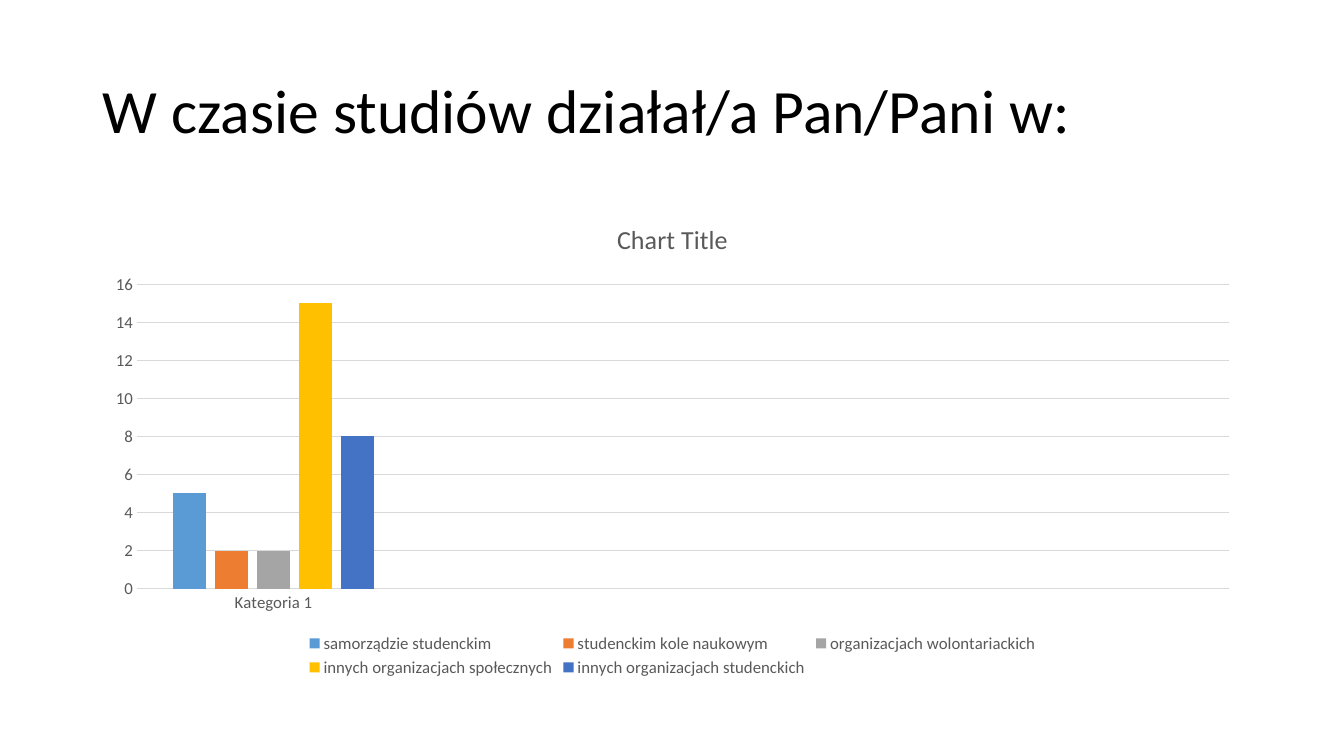
from pptx import Presentation
from pptx.chart.data import CategoryChartData as ChartData
from pptx.dml.color import RGBColor as RGB
from pptx.enum.chart import XL_CHART_TYPE as Kind, XL_LEGEND_POSITION as Spot
from pptx.enum.chart import XL_TICK_MARK as Tick
from pptx.enum.text import MSO_ANCHOR as Anchor, MSO_AUTO_SIZE as Fit, PP_ALIGN as Align
from pptx.util import Inches, Pt

# Content
TITLE = "W czasie studiów\u00a0działał/a Pan/Pani w:"
HEAD = "Chart Title"
CATS = ["Kategoria 1", "", "", ""]
SERIES = [
    ("samorządzie studenckim", 5, "blue"),
    ("studenckim kole naukowym", 2, "orange"),
    ("organizacjach wolontariackich", 2, "gray"),
    ("innych organizacjach społecznych", 15, "gold"),
    ("innych organizacjach studenckich", 8, "navy"),
]
COLORS = {
    "black": "000000", "text": "595959", "grid": "D9D9D9",
    "blue": "5B9BD5", "orange": "ED7D31", "gray": "A5A5A5",
    "gold": "FFC000", "navy": "4472C4",
}
FONT = "Calibri"
LEFT, WIDTH = 0.92, 11.5


def color(name):
    return RGB.from_string(COLORS[name])


def style(font, size, name="text"):
    font.name = FONT
    font.size = Pt(size)
    font.bold = False
    font.color.rgb = color(name)


def rule(line):
    line.color.rgb = color("grid")
    line.width = Pt(0.75)


def add_title(slide):
    title = slide.shapes.title
    title.left, title.top = Inches(LEFT), Inches(0.4)
    title.width, title.height = Inches(WIDTH), Inches(1.45)
    frame = title.text_frame
    frame.auto_size = Fit.NONE
    frame.word_wrap = True
    frame.vertical_anchor = Anchor.MIDDLE
    para = frame.paragraphs[0]
    para.alignment = Align.LEFT
    para.line_spacing = 0.9
    run = para.add_run()
    run.text = TITLE
    style(run.font, 44, "black")


def add_bars(slide):
    data = ChartData()
    data.categories = CATS
    for name, value, _ in SERIES:
        data.add_series(name, [value] + [None] * (len(CATS) - 1))
    chart = slide.shapes.add_chart(
        Kind.COLUMN_CLUSTERED, Inches(LEFT), Inches(2),
        Inches(WIDTH), Inches(4.76), data).chart
    style(chart.font, 10, "black")

    # Chart heading
    chart.has_title = True
    run = chart.chart_title.text_frame.paragraphs[0].add_run()
    run.text = HEAD
    style(run.font, 18.6)
    chart.chart_title.include_in_layout = False

    # Bars
    plot = chart.plots[0]
    plot.gap_width, plot.overlap = 219, -27
    plot.vary_by_categories = False
    for bar, (_, _, name) in zip(plot.series, SERIES):
        bar.invert_if_negative = False
        bar.format.fill.solid()
        bar.format.fill.fore_color.rgb = color(name)

    # Axes
    for axis in (chart.category_axis, chart.value_axis):
        axis.major_tick_mark = axis.minor_tick_mark = Tick.NONE
        style(axis.tick_labels.font, 12)
    rule(chart.category_axis.format.line)
    chart.value_axis.format.line.fill.background()
    chart.value_axis.has_major_gridlines = True
    rule(chart.value_axis.major_gridlines.format.line)

    # Legend
    chart.has_legend = True
    chart.legend.position = Spot.BOTTOM
    chart.legend.include_in_layout = False
    style(chart.legend.font, 12)


def main():
    deck = Presentation()
    deck.slide_width, deck.slide_height = Inches(13.33), Inches(7.5)
    slide = deck.slides.add_slide(deck.slide_layouts[5])
    add_title(slide)
    add_bars(slide)
    deck.save("out.pptx")


if __name__ == "__main__":
    main()
